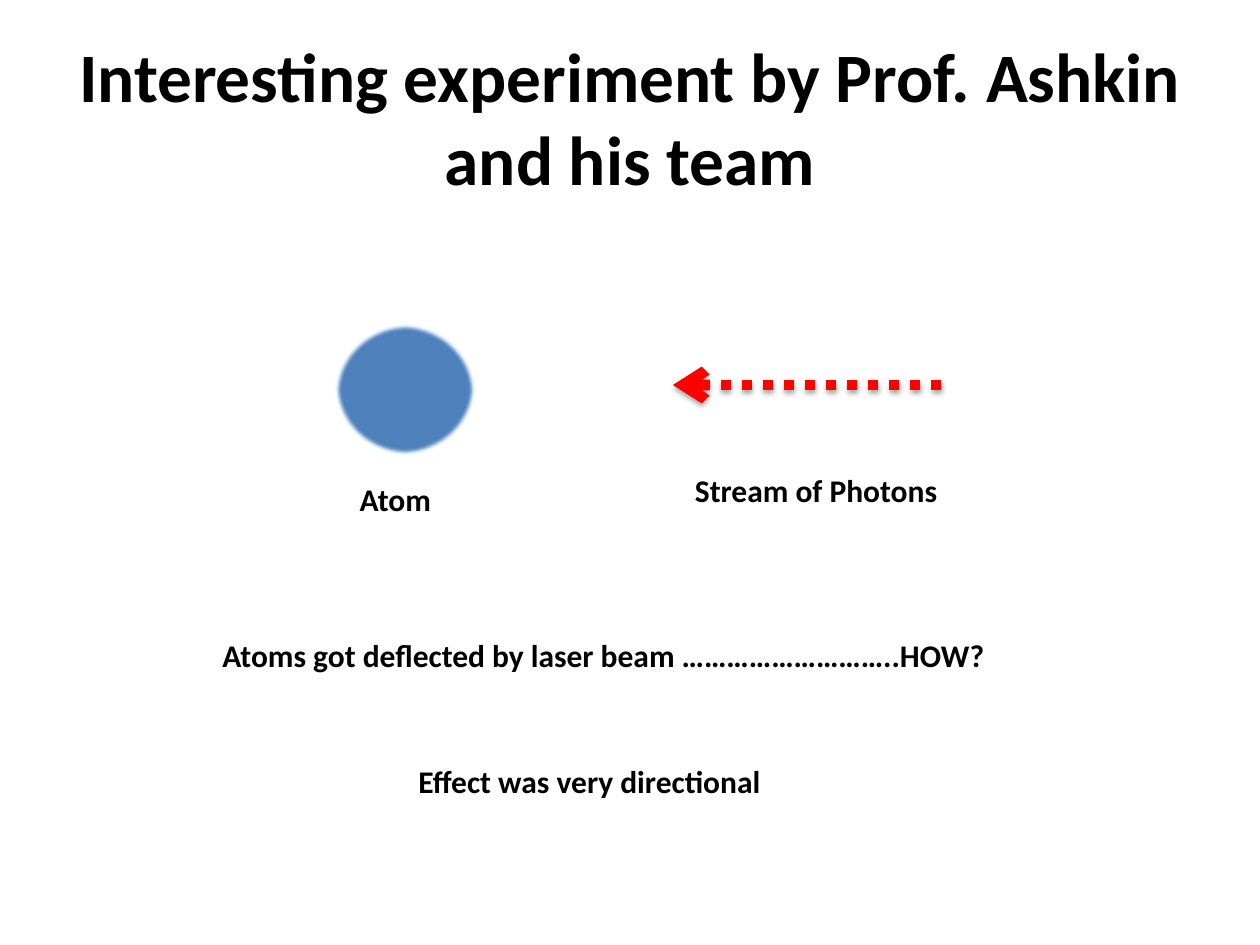
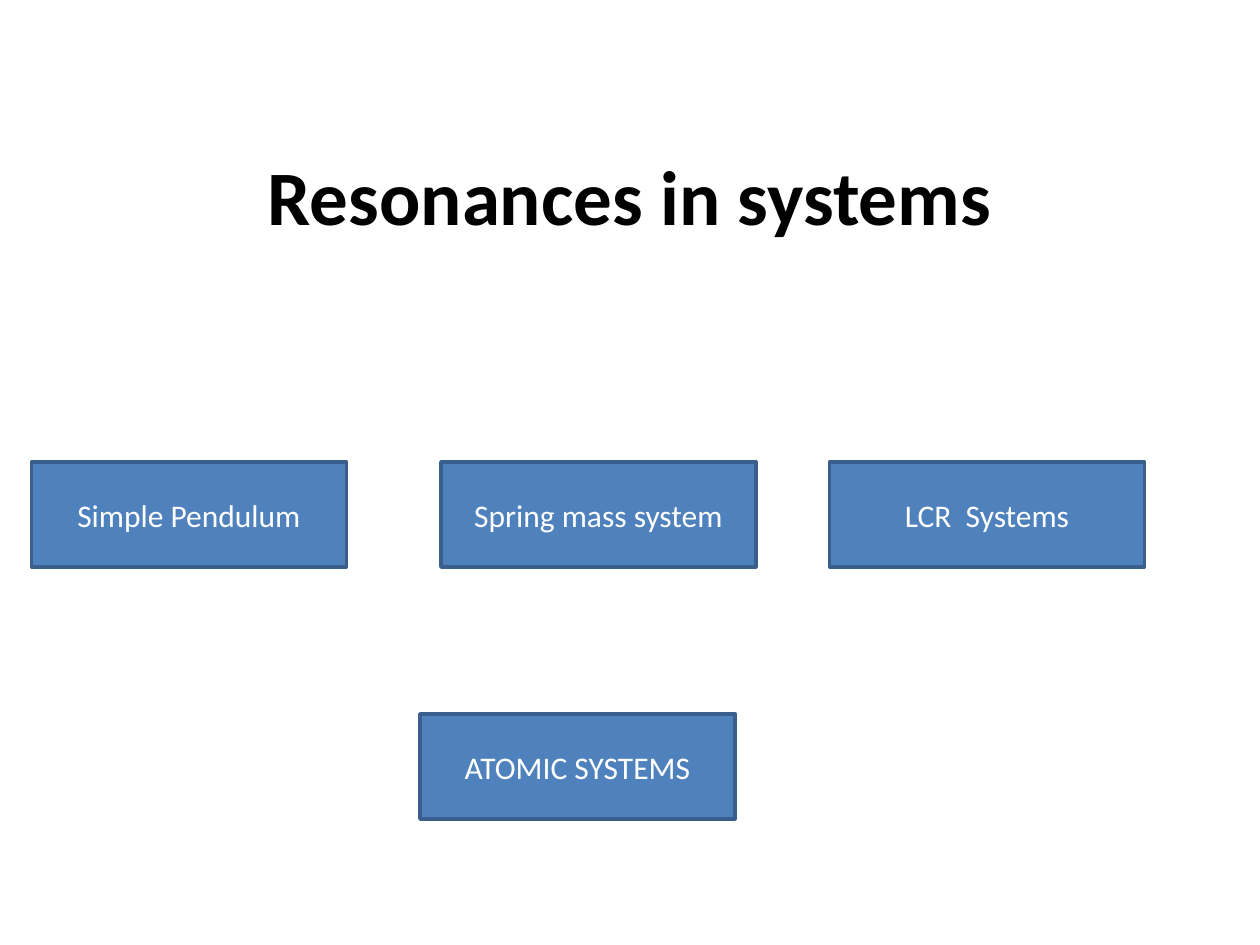
"""Build two slides on photon-atom deflection and resonances in systems."""
from pptx import Presentation
from pptx.dml.color import RGBColor
from pptx.enum.dml import MSO_LINE
from pptx.enum.shapes import MSO_CONNECTOR, MSO_SHAPE
from pptx.enum.text import MSO_ANCHOR, MSO_AUTO_SIZE, PP_ALIGN
from pptx.oxml import parse_xml
from pptx.oxml.ns import nsdecls
from pptx.util import Pt

BLACK = RGBColor(0x00, 0x00, 0x00)
WHITE = RGBColor(0xFF, 0xFF, 0xFF)
BLUE = RGBColor(0x4F, 0x81, 0xBD)
DARK_BLUE = RGBColor(0x3A, 0x5F, 0x8C)
SKY = RGBColor(0x00, 0xB0, 0xF0)
RED = RGBColor(0xFF, 0x00, 0x00)

TITLE_ONLY = 5
SOFT_EDGE = '<a:softEdge rad="31750"/>'
LINE_SHADOW = (
    '<a:outerShdw blurRad="39370" dist="22860" dir="5400000" rotWithShape="0">'
    '<a:srgbClr val="000000"><a:alpha val="35000"/></a:srgbClr></a:outerShdw>'
)
BODY_FONT = {"name": "Calibri", "size": Pt(18), "bold": False}
BOLD_FONT = {**BODY_FONT, "bold": True}


def apply_format(target, values):
    """Set every named attribute of the target."""
    for name, value in values.items():
        setattr(target, name, value)


def write_text(shape, text, font, color, align, frame_format):
    """Put one formatted paragraph into a shape."""
    frame = shape.text_frame
    apply_format(frame, frame_format)
    para = frame.paragraphs[0]
    para.alignment = align
    span = para.add_run()
    span.text = text
    apply_format(span.font, font)
    span.font.color.rgb = color


def set_effects(shape, effect):
    """Replace the theme effects of a shape with the given effect."""
    properties = shape._element.spPr
    properties.append(parse_xml(f'<a:effectLst {nsdecls("a")}>{effect}</a:effectLst>'))


def add_titled_page(deck, title, top, size):
    """Add a title-only page with a bold centred title."""
    page = deck.slides.add_slide(deck.slide_layouts[TITLE_ONLY])
    box = page.shapes.title
    apply_format(box, {"left": Pt(36), "top": Pt(top), "width": Pt(648), "height": Pt(90)})
    frame_format = {"auto_size": MSO_AUTO_SIZE.NONE, "vertical_anchor": MSO_ANCHOR.MIDDLE}
    write_text(box, title, {**BOLD_FONT, "size": Pt(size)}, BLACK, PP_ALIGN.CENTER, frame_format)
    return page


def add_filled_shape(page, kind, left, top, width, height, outline):
    """Add a blue preset shape with a two-point outline."""
    shape = page.shapes.add_shape(kind, Pt(left), Pt(top), Pt(width), Pt(height))
    shape.fill.solid()
    shape.fill.fore_color.rgb = BLUE
    shape.line.color.rgb = outline
    shape.line.width = Pt(2)
    return shape


def add_atom(page, left, top, width, height):
    """Add the soft-edged disc that stands for the atom."""
    atom = add_filled_shape(page, MSO_SHAPE.OVAL, left, top, width, height, SKY)
    set_effects(atom, SOFT_EDGE)


def add_photon_stream(page, start, end, level):
    """Add a dotted horizontal arrow with a soft shadow."""
    arrow = page.shapes.add_connector(
        MSO_CONNECTOR.STRAIGHT, Pt(start), Pt(level), Pt(end), Pt(level))
    arrow.line.color.rgb = RED
    apply_format(arrow.line, {"width": Pt(6), "dash_style": MSO_LINE.ROUND_DOT})
    arrow.line._get_or_add_ln().append(
        parse_xml(f'<a:tailEnd {nsdecls("a")} type="arrow"/>'))
    set_effects(arrow, LINE_SHADOW)


def add_caption(page, text, left, top, width):
    """Add a bold one-line caption."""
    box = page.shapes.add_textbox(Pt(left), Pt(top), Pt(width), Pt(29))
    frame_format = {"word_wrap": False, "auto_size": MSO_AUTO_SIZE.SHAPE_TO_FIT_TEXT}
    write_text(box, text, BOLD_FONT, BLACK, PP_ALIGN.LEFT, frame_format)


def add_system_box(page, text, left, top):
    """Add a labelled rectangle for one resonant system."""
    box = add_filled_shape(page, MSO_SHAPE.RECTANGLE, left, top, 180, 60, DARK_BLUE)
    box.shadow.inherit = False
    frame_format = {"word_wrap": True, "vertical_anchor": MSO_ANCHOR.MIDDLE}
    write_text(box, text, BODY_FONT, WHITE, PP_ALIGN.CENTER, frame_format)


def build_experiment(deck):
    """Show the atom, the photon stream and the findings."""
    page = add_titled_page(deck, "Interesting experiment by Prof. Ashkin and his team", 21.6, 39.6)
    add_atom(page, 192, 186, 79, 73.5)
    add_photon_stream(page, 538, 384.5, 220)
    for text, left, top, width in (
        ("Atom", 198.5, 271, 55.5),
        ("Stream of Photons", 390, 265.5, 154),
        ("Atoms got deflected by laser beam ………………………..HOW?", 120, 360, 453.5),
        ("Effect was very directional", 232, 432, 212.5),
    ):
        add_caption(page, text, left, top, width)


def build_resonances(deck):
    """Show the four resonant systems."""
    page = add_titled_page(deck, "Resonances in systems", 66, 44)
    for text, left, top in (
        ("Simple Pendulum", 18, 264),
        ("Spring mass system", 252, 264),
        ("LCR  Systems", 474, 264),
        ("ATOMIC SYSTEMS", 240, 408),
    ):
        add_system_box(page, text, left, top)


def main():
    """Build and save the deck."""
    deck = Presentation()
    apply_format(deck, {"slide_width": Pt(720), "slide_height": Pt(540)})
    build_experiment(deck)
    build_resonances(deck)
    deck.save("out.pptx")


if __name__ == "__main__":
    main()
